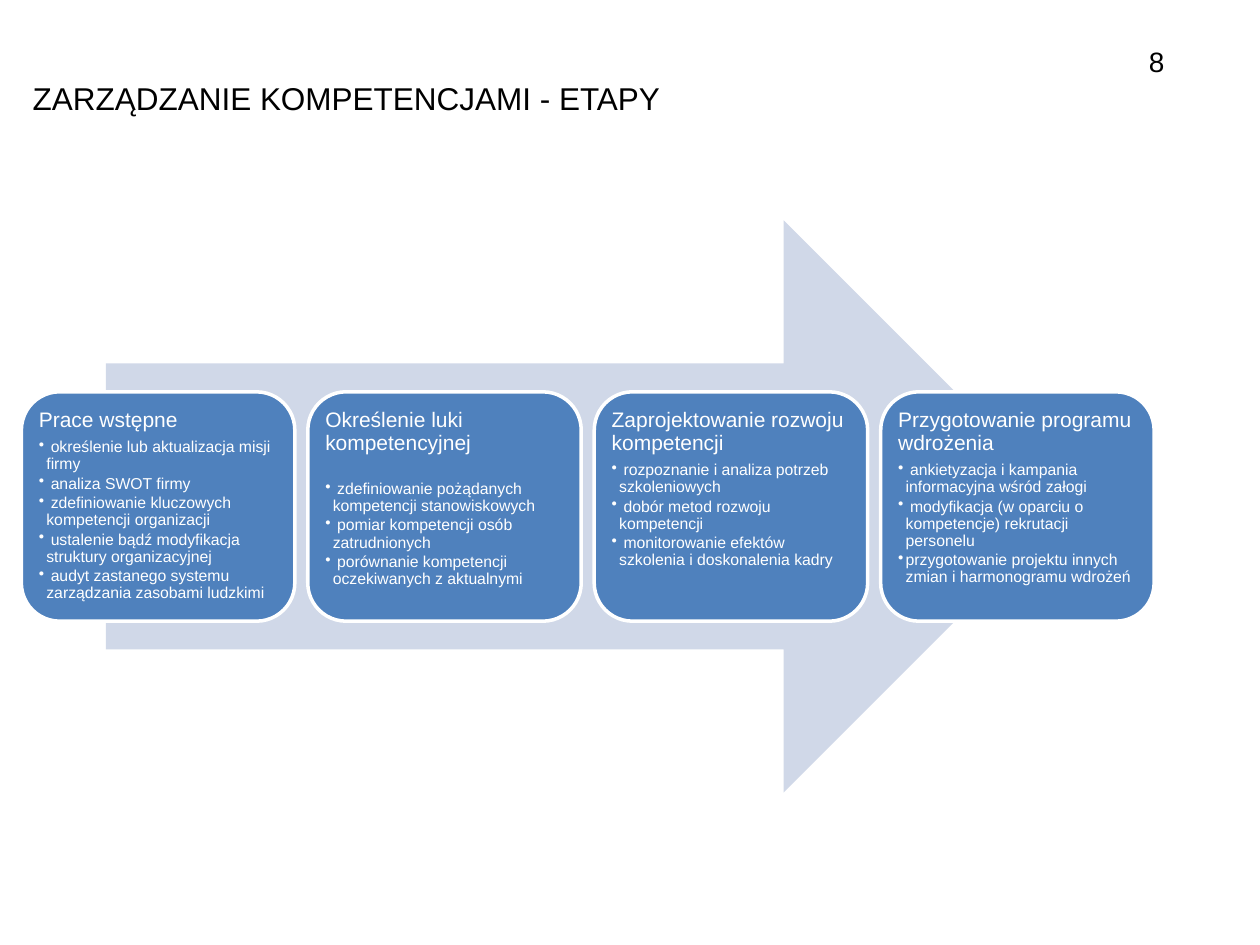
from lxml import etree
from pptx import Presentation
from pptx import util as u
from pptx.dml.color import RGBColor
from pptx.enum import shapes, text
from pptx.oxml.ns import qn

COLORS = {"ink": "000000", "card": "4F81BD", "arrow": "D0D8E8", "white": "FFFFFF"}
FONT = "Arial"
FIRST_LEFT, LAST_LEFT = 0.17, 6.99

STAGES = [
    ("Prace wstępne", [
        " określenie lub aktualizacja misji firmy",
        " analiza SWOT firmy",
        " zdefiniowanie kluczowych kompetencji organizacji",
        " ustalenie bądź modyfikacja struktury organizacyjnej",
        " audyt zastanego systemu zarządzania zasobami ludzkimi"]),
    ("Określenie luki kompetencyjnej", [
        " zdefiniowanie pożądanych kompetencji stanowiskowych",
        " pomiar kompetencji osób zatrudnionych",
        " porównanie kompetencji oczekiwanych z aktualnymi"]),
    ("Zaprojektowanie rozwoju kompetencji", [
        " rozpoznanie i analiza potrzeb szkoleniowych",
        " dobór metod rozwoju kompetencji",
        " monitorowanie efektów szkolenia i doskonalenia kadry"]),
    ("Przygotowanie programu wdrożenia", [
        " ankietyzacja i kampania informacyjna wśród załogi",
        " modyfikacja (w oparciu o kompetencje) rekrutacji personelu",
        "przygotowanie projektu innych zmian i harmonogramu wdrożeń"]),
]
# The second stage has a wider gap under its heading
HEADING_GAPS = [4.2, 15, 4.2, 4.2]


def rgb(name):
    return RGBColor.from_string(COLORS[name])


def write(paragraph, words, size, color="ink", align=text.PP_ALIGN.LEFT,
          line=1.0, after=0, bullet=False):
    """Fill one paragraph and format it."""
    if bullet:
        props = paragraph._p.get_or_add_pPr()
        props.set("marL", str(u.Inches(0.06)))
        props.set("indent", str(-u.Inches(0.06)))
        etree.SubElement(props, qn("a:buChar")).set("char", "•")
    paragraph.alignment = align
    paragraph.line_spacing = line
    paragraph.space_before = u.Pt(0)
    paragraph.space_after = u.Pt(after)
    run = paragraph.add_run()
    run.text = words
    run.font.name = FONT
    run.font.size = u.Pt(size)
    run.font.color.rgb = rgb(color)


def add_block(slide, preset, left, top, width, height, fill, outline=None):
    block = slide.shapes.add_shape(preset, u.Inches(left), u.Inches(top),
                                   u.Inches(width), u.Inches(height))
    block.shadow.inherit = False
    block.fill.solid()
    block.fill.fore_color.rgb = rgb(fill)
    if outline:
        block.line.color.rgb = rgb(outline)
        block.line.width = u.Pt(2)
    else:
        block.line.fill.background()
    return block


def add_stage(slide, left, heading, tasks, heading_gap):
    card = add_block(slide, shapes.MSO_SHAPE.ROUNDED_RECTANGLE,
                     left, 3.11, 2.17, 1.82, "card", "white")
    frame = card.text_frame
    frame.word_wrap = True
    frame.vertical_anchor = text.MSO_ANCHOR.TOP
    frame.margin_left = frame.margin_right = u.Inches(0.05)
    frame.margin_top = frame.margin_bottom = u.Inches(0.05)
    write(frame.paragraphs[0], heading, 12, "white", line=0.9, after=heading_gap)
    for task in tasks:
        write(frame.add_paragraph(), task, 9, "white", line=0.9, after=1.35, bullet=True)


def add_title(slide, words):
    title = slide.shapes.title
    title.left, title.top = u.Inches(0.16), u.Inches(0.58)
    title.width, title.height = u.Inches(8.12), u.Inches(0.73)
    title.text_frame.vertical_anchor = text.MSO_ANCHOR.TOP
    write(title.text_frame.paragraphs[0], words, 18)


def add_page_number(slide, number):
    box = slide.shapes.add_textbox(u.Inches(7), u.Inches(0.23),
                                   u.Inches(2.34), u.Inches(0.52))
    box.text_frame.word_wrap = True
    box.text_frame.vertical_anchor = text.MSO_ANCHOR.MIDDLE
    write(box.text_frame.paragraphs[0], number, 16, align=text.PP_ALIGN.RIGHT)


def main():
    deck = Presentation()
    deck.slide_width, deck.slide_height = u.Inches(10), u.Inches(7.5)
    slide = deck.slides.add_slide(deck.slide_layouts[5])

    add_title(slide, "ZARZĄDZANIE KOMPETENCJAMI - ETAPY")

    # Process arrow with evenly spaced stages on it
    add_block(slide, shapes.MSO_SHAPE.RIGHT_ARROW, 0.84, 1.75, 7.65, 4.54, "arrow")
    step = (LAST_LEFT - FIRST_LEFT) / (len(STAGES) - 1)
    for i, ((heading, tasks), gap) in enumerate(zip(STAGES, HEADING_GAPS)):
        add_stage(slide, FIRST_LEFT + i * step, heading, tasks, gap)

    add_page_number(slide, "8")
    deck.save("out.pptx")


if __name__ == "__main__":
    main()
